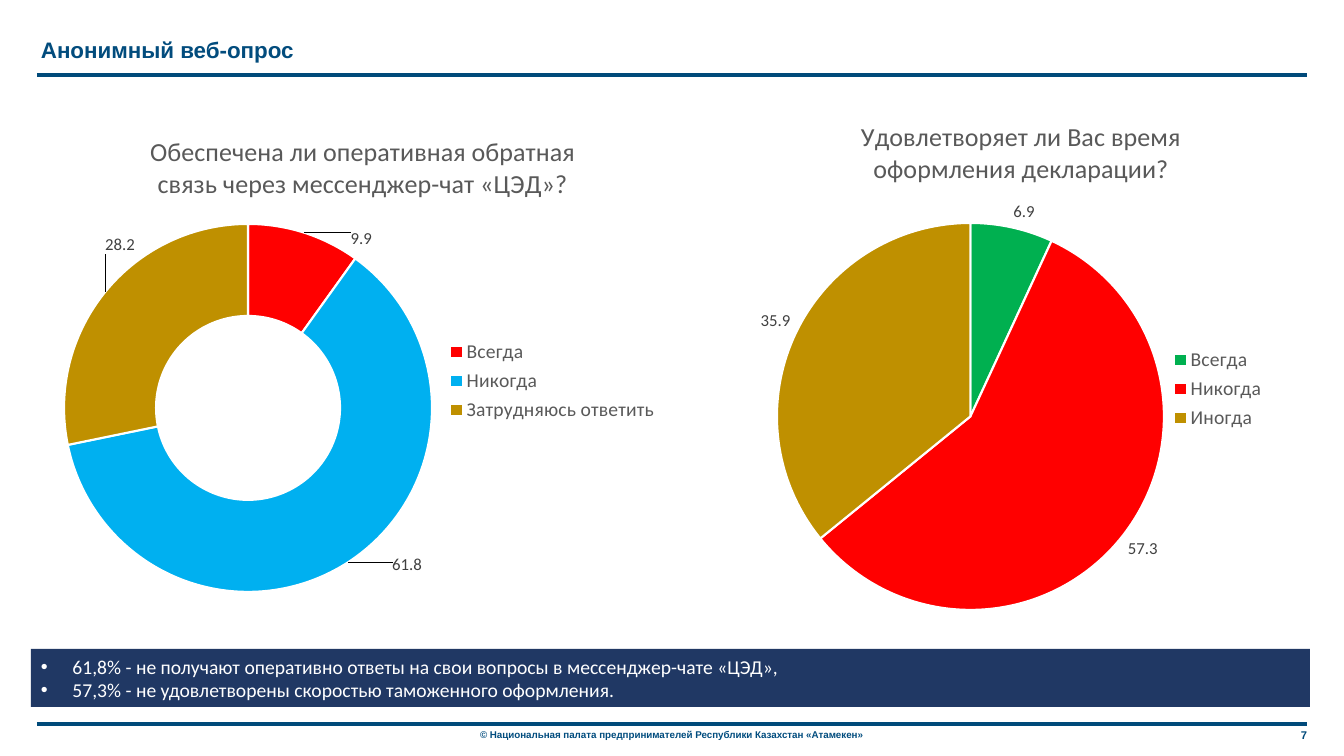
from lxml.etree import SubElement
from pptx import Presentation
from pptx.chart.data import CategoryChartData
from pptx.dml.color import RGBColor
from pptx.enum.chart import XL_CHART_TYPE, XL_LABEL_POSITION, XL_LEGEND_POSITION
from pptx.enum.shapes import MSO_CONNECTOR, MSO_SHAPE
from pptx.enum.text import MSO_ANCHOR, PP_ALIGN
from pptx.oxml.ns import qn
from pptx.util import Pt

SCALE = 914400 / 100.8
NAVY = RGBColor(0x00, 0x4A, 0x7A)
HEADING = RGBColor(0x02, 0x4C, 0x7D)
COPYRIGHT = RGBColor(0x00, 0x4C, 0x7E)
BAR = RGBColor(0x20, 0x38, 0x64)
WHITE = RGBColor(0xFF, 0xFF, 0xFF)
BLACK = RGBColor(0x00, 0x00, 0x00)
GREY = RGBColor(0x59, 0x59, 0x59)
DARK_GREY = RGBColor(0x40, 0x40, 0x40)
RED = RGBColor(0xFF, 0x00, 0x00)
BLUE = RGBColor(0x00, 0xB0, 0xF0)
GOLD = RGBColor(0xBF, 0x90, 0x00)
GREEN = RGBColor(0x00, 0xB0, 0x50)


def style(font, color, **values):
    for name, value in values.items():
        setattr(font, name, value)
    font.color.rgb = color


def place(parent, index, **values):
    for old in parent.findall(qn("c:layout")):
        parent.remove(old)
    layout = SubElement(parent, qn("c:layout"))
    parent.insert(index, layout)
    manual = SubElement(layout, qn("c:manualLayout"))
    for name, value in values.items():
        text = value if isinstance(value, str) else f"{value:.4f}"
        SubElement(manual, qn(f"c:{name}")).set("val", text)


prs = Presentation()
prs.slide_width, prs.slide_height = round(1344 * SCALE), round(756 * SCALE)
slide = prs.slides.add_slide(prs.slide_layouts[6])

for y in (75, 724):
    ends = [round(v * SCALE) for v in (37, y, 1307, y)]
    rule = slide.shapes.add_connector(MSO_CONNECTOR.STRAIGHT, *ends)
    rule.line.color.rgb = NAVY
    rule.line.width = Pt(2.5)
    SubElement(rule._element.spPr, qn("a:effectLst"))

captions = [
    ("7", (1246, 724, 71, 23), PP_ALIGN.RIGHT, NAVY, 8),
    ("© Национальная палата предпринимателей Республики Казахстан «Атамекен»",
     (435, 724, 473, 22), PP_ALIGN.CENTER, COPYRIGHT, 7),
    ("Анонимный веб-опрос", (31, 31, 884, 37), PP_ALIGN.LEFT, HEADING, 16),
]
for wording, box, align, color, size in captions:
    caption = slide.shapes.add_textbox(*[round(v * SCALE) for v in box])
    frame = caption.text_frame
    frame.word_wrap = True
    frame.vertical_anchor = MSO_ANCHOR.MIDDLE
    frame.text = wording
    frame.paragraphs[0].alignment = align
    style(frame.paragraphs[0].runs[0].font, color, name="Arial", size=Pt(size), bold=True)

findings = slide.shapes.add_shape(
    MSO_SHAPE.RECTANGLE, *[round(v * SCALE) for v in (31, 649, 1279, 58)])
findings.shadow.inherit = False
findings.fill.solid()
findings.fill.fore_color.rgb = BAR
findings.line.fill.background()
findings.text_frame.word_wrap = True
findings.text_frame.vertical_anchor = MSO_ANCHOR.MIDDLE
findings.text_frame.text = (
    "61,8% - не получают оперативно ответы на свои вопросы в мессенджер-чате «ЦЭД»,\n"
    "57,3% - не удовлетворены скоростью таможенного оформления.")
for finding in findings.text_frame.paragraphs:
    finding.alignment = PP_ALIGN.LEFT
    props = finding._p.get_or_add_pPr()
    props.set("marL", "285750")
    props.set("indent", "-285750")
    SubElement(props, qn("a:buFont")).set("typeface", "Arial")
    SubElement(props, qn("a:buChar")).set("char", "•")
    style(finding.runs[0].font, WHITE, name="Calibri", size=Pt(14))

surveys = [
    dict(kind=XL_CHART_TYPE.DOUGHNUT, box=(49, 110, 621, 505),
         question="Обеспечена ли оперативная обратная\nсвязь через мессенджер-чат «ЦЭД»?",
         answers=["Всегда", "Никогда", "Затрудняюсь ответить"],
         shares=[9.9, 61.8, 28.2], colors=[RED, BLUE, GOLD],
         title=(147, 131), plot=(64, 224, 368), legend=(445, 335, 215, 92),
         shifts=[(71, -38), (84, 41), (-21, -76)]),
    dict(kind=XL_CHART_TYPE.PIE, box=(736, 95, 564, 530),
         question="Удовлетворяет ли Вас время\nоформления декларации?",
         answers=["Всегда", "Никогда", "Иногда"],
         shares=[6.9, 57.3, 35.9], colors=[GREEN, RED, GOLD],
         title=(858, 116), plot=(777, 223, 387), legend=(1168, 343, 100, 92),
         shifts=[]),
]
for survey in surveys:
    left, top, width, height = survey["box"]
    data = CategoryChartData(number_format="0.0")
    data.categories = survey["answers"]
    data.add_series("Series 1", survey["shares"])
    chart = slide.shapes.add_chart(
        survey["kind"], *[round(v * SCALE) for v in survey["box"]], data).chart
    style(chart.font, BLACK, name="Calibri", size=Pt(10))

    chart.has_title = True
    question = chart.chart_title.text_frame
    question.text = survey["question"]
    for line in question.paragraphs:
        line.alignment = PP_ALIGN.CENTER
        style(line.runs[0].font, GREY, name="Calibri", size=Pt(18.6), bold=False)
    x, y = survey["title"]
    place(chart.chart_title._element, 1, xMode="edge", yMode="edge",
          x=(x - left) / width, y=(y - top) / height)

    chart.has_legend = True
    chart.legend.position = XL_LEGEND_POSITION.RIGHT
    chart.legend.include_in_layout = False
    style(chart.legend.font, GREY, name="Calibri", size=Pt(14))
    x, y, w, h = survey["legend"]
    place(chart.legend._element, 1, xMode="edge", yMode="edge",
          x=(x - left) / width, y=(y - top) / height, w=w / width, h=h / height)

    x, y, side = survey["plot"]
    place(chart._chartSpace.chart.plotArea, 0, layoutTarget="inner",
          xMode="edge", yMode="edge", x=(x - left) / width, y=(y - top) / height,
          w=side / width, h=side / height)

    plot = chart.plots[0]
    plot.vary_by_categories = True
    series = plot.series[0]
    labels = series.data_labels
    labels.show_value = True
    style(labels.font, DARK_GREY, name="Calibri", size=Pt(12))
    if survey["kind"] == XL_CHART_TYPE.PIE:
        labels.position = XL_LABEL_POSITION.OUTSIDE_END
    for index, color in enumerate(survey["colors"]):
        slice_format = series.points[index].format
        slice_format.fill.solid()
        slice_format.fill.fore_color.rgb = color
        slice_format.line.color.rgb = WHITE
        slice_format.line.width = Pt(1.5)
    for index, (dx, dy) in enumerate(survey["shifts"]):
        label = series.points[index].data_label
        style(label.font, DARK_GREY, name="Calibri", size=Pt(12))
        place(label._get_or_add_dLbl(), 1, x=dx / width, y=dy / height)

prs.save("out.pptx")
